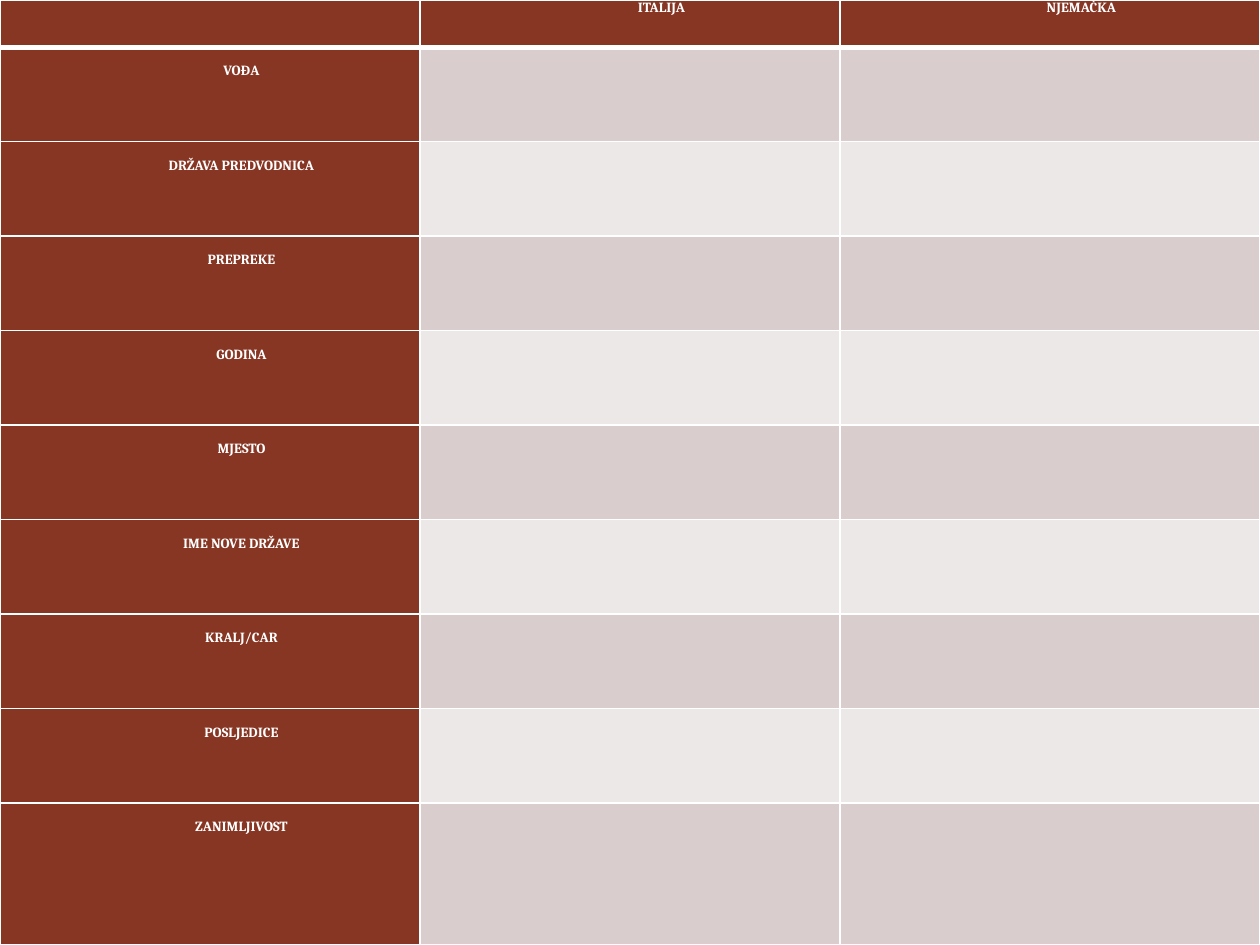
"""Build a comparison table slide on the unification of Italy and Germany."""
import pptx
import pptx.dml.color
import pptx.enum.text
import pptx.oxml
import pptx.oxml.ns
import pptx.util

HEADERS = ["", "ITALIJA", "NJEMAČKA"]
TOPICS = [
    "VOĐA",
    "DRŽAVA PREDVODNICA",
    "PREPREKE",
    "GODINA",
    "MJESTO",
    "IME NOVE DRŽAVE",
    "KRALJ/CAR",
    "POSLJEDICE",
    "ZANIMLJIVOST",
]

BROWN = pptx.dml.color.RGBColor(0x87, 0x36, 0x24)
DARK_BAND = pptx.dml.color.RGBColor(0xD9, 0xCE, 0xCD)
LIGHT_BAND = pptx.dml.color.RGBColor(0xED, 0xE8, 0xE8)
TAN = pptx.dml.color.RGBColor(0x9F, 0x75, 0x4A)
WHITE = pptx.dml.color.RGBColor(0xFF, 0xFF, 0xFF)

PX = 9525
WIDTH, HEIGHT = 960, 720
HEADER_H, TOPIC_H = 36, 72
SIDE_MARGIN, TOPIC_TOP, INDENT = 7, 12, 48


def write(cell, text, size=8, font="Cambria", color=WHITE, bold=True, top=0):
    cell.margin_left = cell.margin_right = SIDE_MARGIN * PX
    cell.margin_top, cell.margin_bottom = top * PX, 0
    if not text:
        return
    p = cell.text_frame.paragraphs[0]
    p.alignment = pptx.enum.text.PP_ALIGN.CENTER
    pPr = p._p.get_or_add_pPr()
    pPr.set("marL", str(INDENT * PX))
    pPr.set("indent", "0")
    r = p.add_run()
    r.text = text
    r.font.size = pptx.util.Pt(size)
    r.font.name = font
    r.font.bold = bold
    r.font.color.rgb = color


def paint(cell, fill, **widths):
    cell.fill.solid()
    cell.fill.fore_color.rgb = fill
    tcPr = cell._tc.get_or_add_tcPr()
    for i, side in enumerate("LRTB"):
        width = pptx.util.Pt(widths.get(side, 1))
        tcPr.insert(i, pptx.oxml.parse_xml(
            f'<a:ln{side} {pptx.oxml.ns.nsdecls("a")} w="{width}"><a:solidFill>'
            f'<a:srgbClr val="{WHITE}"/></a:solidFill></a:ln{side}>'))


def main():
    prs = pptx.Presentation()
    prs.slide_width, prs.slide_height = WIDTH * PX, HEIGHT * PX
    s = prs.slides.add_slide(prs.slide_layouts[6])
    s.background.fill.solid()
    s.background.fill.fore_color.rgb = TAN

    rows = [HEADERS] + [[topic, "", ""] for topic in TOPICS]
    table = s.shapes.add_table(
        len(rows), len(HEADERS), 0, 0, WIDTH * PX, HEIGHT * PX).table
    for column in table.columns:
        column.width = WIDTH * PX // len(HEADERS)
    last_h = HEIGHT - HEADER_H - TOPIC_H * (len(TOPICS) - 1)
    heights = [HEADER_H] + [TOPIC_H] * (len(TOPICS) - 1) + [last_h]

    for i, (texts, height) in enumerate(zip(rows, heights)):
        table.rows[i].height = height * PX
        band = DARK_BAND if i % 2 else LIGHT_BAND
        for j, text in enumerate(texts):
            cell = table.cell(i, j)
            write(cell, text, top=TOPIC_TOP if i else 0)
            paint(cell, BROWN if i == 0 or j == 0 else band,
                  T=3 if i == 1 else 1, B=3 if i == 0 else 1)

    prs.save("out.pptx")


if __name__ == "__main__":
    main()
